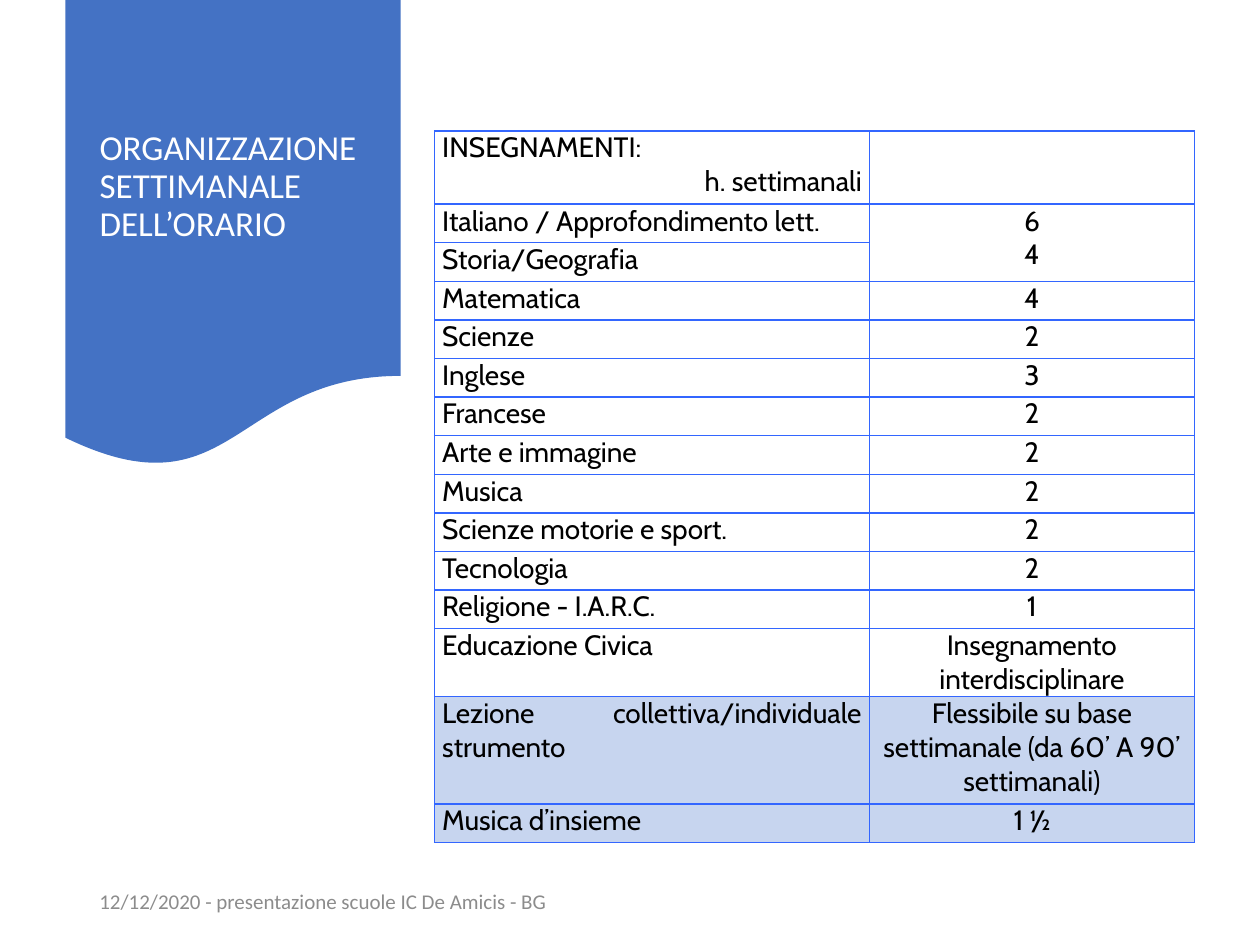
"""Build the slide showing the weekly timetable of school subjects."""
from dataclasses import dataclass

from lxml.etree import SubElement
from pptx import Presentation
from pptx.dml.color import RGBColor
from pptx.enum.shapes import MSO_SHAPE
from pptx.enum.text import MSO_ANCHOR, MSO_AUTO_SIZE, PP_ALIGN
from pptx.oxml.ns import qn
from pptx.util import Inches, Pt

TITLE = "ORGANIZZAZIONE SETTIMANALE DELL’ORARIO"
FOOTER = "12/12/2020 - presentazione scuole IC De Amicis - BG"
HEADING = ["INSEGNAMENTI:", " h. settimanali"]
SUBJECTS = [
    ("Italiano / Approfondimento lett.", ["6", "4"]),
    ("Storia/Geografia", None),
    ("Matematica", ["4"]),
    ("Scienze", ["2"]),
    ("Inglese", ["3"]),
    ("Francese", ["2"]),
    ("Arte e immagine", ["2"]),
    ("Musica", ["2"]),
    ("Scienze motorie e sport.", ["2"]),
    ("Tecnologia", ["2"]),
    ("Religione - I.A.R.C.", ["1"]),
    ("Educazione Civica", ["Insegnamento interdisciplinare"]),
    ("Lezione collettiva/individuale strumento ",
     ["Flessibile su base settimanale (da 60’ A 90’ settimanali)"]),
    ("Musica d’insieme ", ["1 ½"]),
]
INSTRUMENT_ROWS = 2
HEADING_HEIGHT = 0.58
TALL_ROWS = {"Educazione Civica": 0.54, "Lezione collettiva/individuale strumento ": 0.85}
TABLE_BOX = (3.45, 1.04, 6.03, 5.65)
COLUMN_WIDTHS = (3.45, 2.58)


@dataclass(frozen=True)
class Theme:
    banner: str = "4472C4"
    title: str = "FFFFFF"
    footer: str = "8C8C8C"
    ink: str = "000000"
    border: str = "3366FF"
    highlight: str = "C7D5EF"
    body_font: str = "Cabin"
    display_font: str = "Calibri"
    title_size: int = 20
    table_size: int = 16
    footer_size: int = 12
    border_width: int = 1


THEME = Theme()


def write(frame, *lines, size=THEME.table_size, font=THEME.body_font, color=THEME.ink,
          aligns=(PP_ALIGN.LEFT,), spacing=None, after=0, anchor=MSO_ANCHOR.TOP):
    frame.word_wrap = True
    frame.vertical_anchor = anchor
    for index, line in enumerate(lines):
        paragraph = frame.add_paragraph() if index else frame.paragraphs[0]
        paragraph.alignment = aligns[min(index, len(aligns) - 1)]
        paragraph.space_before, paragraph.space_after = Pt(0), Pt(after)
        paragraph.line_spacing = spacing
        run = paragraph.add_run()
        run.text = line
        run.font.size, run.font.name = Pt(size), font
        run.font.color.rgb = RGBColor.from_string(color)


def format_cell(cell, highlighted):
    cell.margin_left = cell.margin_right = Inches(0.06)
    cell.margin_top = cell.margin_bottom = 0
    properties = cell._tc.get_or_add_tcPr()
    for side in ("a:lnL", "a:lnR", "a:lnT", "a:lnB"):
        border = SubElement(properties, qn(side), w=str(Pt(THEME.border_width)))
        SubElement(SubElement(border, qn("a:solidFill")), qn("a:srgbClr"), val=THEME.border)
    if highlighted:
        cell.fill.solid()
        cell.fill.fore_color.rgb = RGBColor.from_string(THEME.highlight)
    else:
        cell.fill.background()


def add_timetable(slide):
    row_count = len(SUBJECTS) + 1
    table = slide.shapes.add_table(row_count, 2, *map(Inches, TABLE_BOX)).table
    for column, width in zip(table.columns, COLUMN_WIDTHS):
        column.width = Inches(width)
    free_height = TABLE_BOX[3] - HEADING_HEIGHT - sum(TALL_ROWS.values())
    plain_height = free_height / (len(SUBJECTS) - len(TALL_ROWS))
    heights = [HEADING_HEIGHT] + [TALL_ROWS.get(name, plain_height) for name, _ in SUBJECTS]
    for index, (row, height) in enumerate(zip(table.rows, heights)):
        row.height = Inches(height)
        for cell in row.cells:
            format_cell(cell, index >= row_count - INSTRUMENT_ROWS)

    write(table.cell(0, 0).text_frame, *HEADING, aligns=(PP_ALIGN.JUSTIFY, PP_ALIGN.RIGHT))
    for index, (subject, hours) in enumerate(SUBJECTS, start=1):
        write(table.cell(index, 0).text_frame, subject, aligns=(PP_ALIGN.JUSTIFY,))
        if hours is None:
            table.cell(index - 1, 1).merge(table.cell(index, 1))
        else:
            write(table.cell(index, 1).text_frame, *hours, aligns=(PP_ALIGN.CENTER,))


def main():
    deck = Presentation()
    deck.slide_width, deck.slide_height = Inches(10), Inches(7.5)
    slide = deck.slides.add_slide(deck.slide_layouts[5])

    banner = slide.shapes.add_shape(
        MSO_SHAPE.FLOWCHART_DOCUMENT, *map(Inches, (0.52, 0, 2.66, 3.72)))
    banner.shadow.inherit = False
    banner.fill.solid()
    banner.fill.fore_color.rgb = RGBColor.from_string(THEME.banner)
    banner.line.fill.background()

    title = slide.shapes.title
    title.left, title.top, title.width, title.height = map(Inches, (0.69, 0.19, 2.33, 2.59))
    title.text_frame.auto_size = MSO_AUTO_SIZE.NONE
    write(title.text_frame, TITLE, size=THEME.title_size, font=THEME.display_font,
          color=THEME.title, spacing=0.9, anchor=MSO_ANCHOR.MIDDLE)
    banner._element.addnext(title._element)

    footer = slide.shapes.add_textbox(*map(Inches, (0.69, 6.95, 4.89, 0.4)))
    write(footer.text_frame, FOOTER, size=THEME.footer_size, font=THEME.display_font,
          color=THEME.footer, after=6, anchor=MSO_ANCHOR.MIDDLE)

    add_timetable(slide)
    deck.save("out.pptx")


if __name__ == "__main__":
    main()
